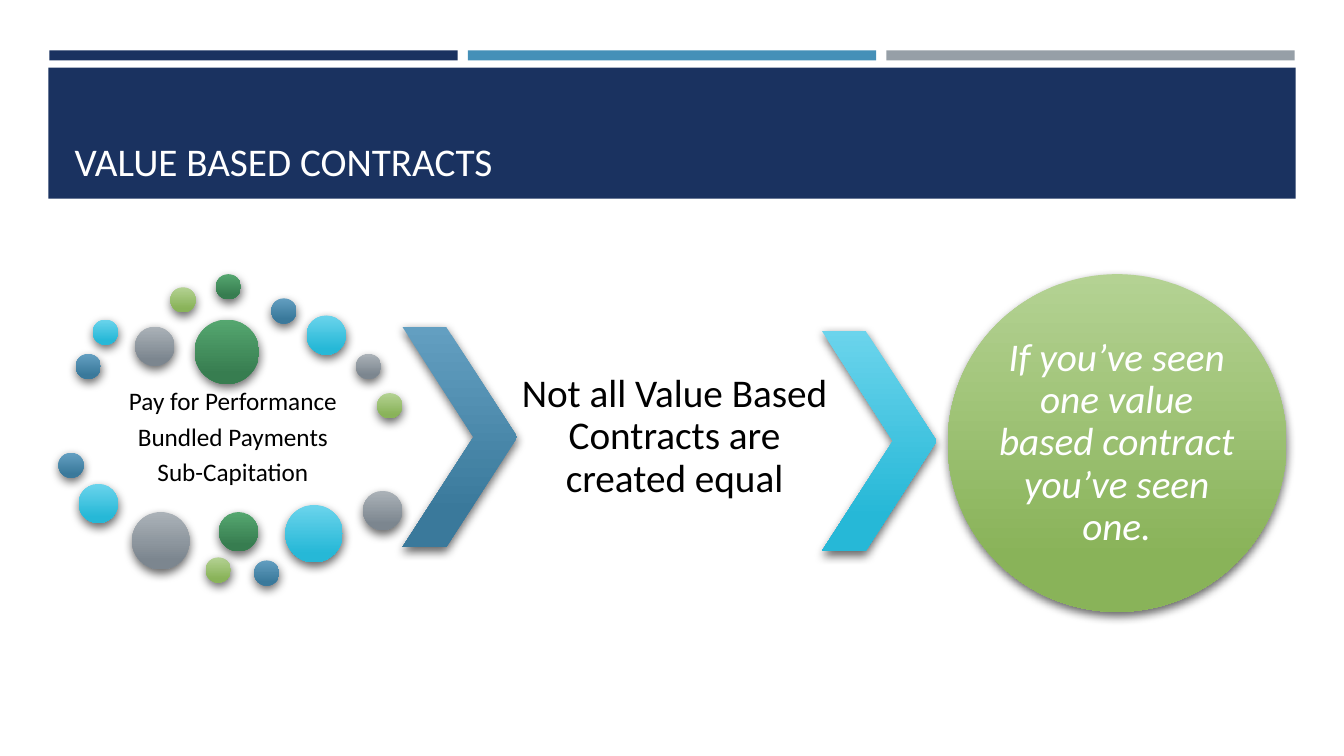
from itertools import cycle

from lxml.etree import SubElement
from pptx import Presentation
from pptx.dml.color import RGBColor
from pptx.enum.shapes import MSO_SHAPE as Preset
from pptx.enum.text import MSO_ANCHOR as Anchor, MSO_AUTO_SIZE as AutoSize, PP_ALIGN as Align
from pptx.oxml.ns import qn
from pptx.util import Emu, Pt

EMU_PER_PX = 9144  # 100 px to the inch

WHITE = RGBColor(0xFF, 0xFF, 0xFF)
BLACK = RGBColor(0x00, 0x00, 0x00)
NAVY = RGBColor(0x1A, 0x32, 0x60)
BLUE = RGBColor(0x45, 0x90, 0xB8)
GRAY = RGBColor(0x96, 0x9F, 0xA7)

# Each gradient runs from its top colour to its bottom colour.
STEEL_GRADIENT = (RGBColor(0x63, 0x9F, 0xC1), RGBColor(0x3A, 0x79, 0x9B))
CYAN_GRADIENT = (RGBColor(0x6B, 0xD4, 0xEC), RGBColor(0x26, 0xB8, 0xD7))
GRAY_GRADIENT = (RGBColor(0xAB, 0xB2, 0xB8), RGBColor(0x7C, 0x86, 0x8F))
LIME_GRADIENT = (RGBColor(0xB4, 0xD2, 0x93), RGBColor(0x89, 0xB3, 0x59))
GREEN_GRADIENT = (RGBColor(0x55, 0xA7, 0x70), RGBColor(0x37, 0x7D, 0x50))
GRADIENTS = (STEEL_GRADIENT, CYAN_GRADIENT, GRAY_GRADIENT, LIME_GRADIENT, GREEN_GRADIENT)

SMALL, MEDIUM, LARGE, LARGEST = 25, 39, 57, 64
BUBBLES = (  # left, top, diameter
    (75, 351, SMALL), (92, 317, SMALL), (134, 324, MEDIUM),
    (169, 285, SMALL), (214, 272, SMALL), (269, 296, SMALL),
    (304, 313, MEDIUM), (353, 351, SMALL), (374, 390, SMALL),
    (193, 317, LARGEST), (58, 449, SMALL), (78, 480, MEDIUM),
    (131, 508, LARGE), (204, 553, SMALL), (217, 508, MEDIUM),
    (252, 556, SMALL), (283, 501, LARGE), (360, 487, MEDIUM),
)
CONTRACT_TYPES = ("Pay for Performance", "Bundled Payments", "Sub-Capitation")


def px(length):
    return Emu(length * EMU_PER_PX)


def add_plain_shape(slide, preset, box):
    """Add a preset shape without line or inherited shadow."""
    shape = slide.shapes.add_shape(preset, *map(px, box))
    shape.shadow.inherit = False
    shape.line.fill.background()
    return shape


def add_bar(slide, box, color):
    bar = add_plain_shape(slide, Preset.RECTANGLE, box)
    bar.fill.solid()
    bar.fill.fore_color.rgb = color


def add_shadow(shape):
    effects = shape.element.spPr.find(qn("a:effectLst"))
    shadow = SubElement(effects, qn("a:outerShdw"), blurRad=str(Pt(7)),
                        dist=str(Pt(3)), dir="5040000", rotWithShape="0")
    color = SubElement(shadow, qn("a:srgbClr"), val=str(BLACK))
    SubElement(color, qn("a:alpha"), val="60000")


def add_glossy_shape(slide, preset, box, gradient):
    """Add a shape with a vertical gradient and a soft shadow."""
    shape = add_plain_shape(slide, preset, box)
    shape.fill.gradient()
    shape.fill.gradient_angle = 270
    for stop, color, position in zip(shape.fill.gradient_stops, gradient, (0, 0.84)):
        stop.color.rgb = color
        stop.position = position
    add_shadow(shape)
    return shape


def add_chevron(slide, left, top, gradient):
    chevron = add_glossy_shape(slide, Preset.CHEVRON, (left, top, 114, 219), gradient)
    chevron.adjustments[0] = 0.62


def write_text(frame, lines, size, color, align=Align.CENTER, italic=False,
               line_spacing=0.9, space_after=0):
    paragraph_format = {"alignment": align, "line_spacing": line_spacing,
                        "space_after": Pt(space_after)}
    font_format = {"name": "Calibri", "size": Pt(size), "italic": italic}
    for index, line in enumerate(lines):
        paragraph = frame.add_paragraph() if index else frame.paragraphs[0]
        for name, value in paragraph_format.items():
            setattr(paragraph, name, value)
        run = paragraph.add_run()
        run.text = line
        for name, value in font_format.items():
            setattr(run.font, name, value)
        run.font.color.rgb = color


def add_text(slide, box, lines, size, color, inset, **text_format):
    frame = slide.shapes.add_textbox(*map(px, box)).text_frame
    frame_format = {"word_wrap": True, "auto_size": AutoSize.NONE,
                    "vertical_anchor": Anchor.MIDDLE}
    for side in ("left", "top", "right", "bottom"):
        frame_format[f"margin_{side}"] = px(inset)
    for name, value in frame_format.items():
        setattr(frame, name, value)
    write_text(frame, lines, size, color, **text_format)


def add_header(slide, title_text):
    for index, color in enumerate((NAVY, BLUE, GRAY)):
        add_bar(slide, (49 + 415 * index, 50, 405, 10), color)
    add_bar(slide, (48, 67, 1237, 130), NAVY)

    title = slide.shapes.title
    slide.shapes.element.append(title.element)  # bring in front of the banner
    for name, length in zip(("left", "top", "width", "height"), (64, 77, 1206, 111)):
        setattr(title, name, px(length))
    title.text_frame.auto_size = AutoSize.NONE
    title.text_frame.vertical_anchor = Anchor.BOTTOM
    write_text(title.text_frame, [title_text], 28, WHITE, align=Align.LEFT, line_spacing=1.0)


def add_contract_types(slide):
    add_text(slide, (75, 383, 312, 103), CONTRACT_TYPES, 18, BLACK, 3, space_after=6)
    for (left, top, diameter), gradient in zip(BUBBLES, cycle(GRADIENTS)):
        add_glossy_shape(slide, Preset.OVAL, (left, top, diameter, diameter), gradient)


def main():
    presentation = Presentation()
    presentation.slide_width, presentation.slide_height = px(1333), px(750)
    slide = presentation.slides.add_slide(presentation.slide_layouts[5])

    add_header(slide, "VALUE BASED CONTRACTS")
    add_contract_types(slide)
    add_chevron(slide, 399, 324, STEEL_GRADIENT)
    add_text(slide, (513, 324, 312, 219),
             ["Not all Value Based Contracts are created equal"], 28, BLACK, 4)
    add_chevron(slide, 815, 328, CYAN_GRADIENT)
    add_glossy_shape(slide, Preset.OVAL, (940, 272, 336, 335), LIME_GRADIENT)
    add_text(slide, (989, 321, 237, 237),
             ["If you’ve seen one value based contract you’ve seen one."],
             28, WHITE, 0, italic=True)

    presentation.save("out.pptx")


if __name__ == "__main__":
    main()
